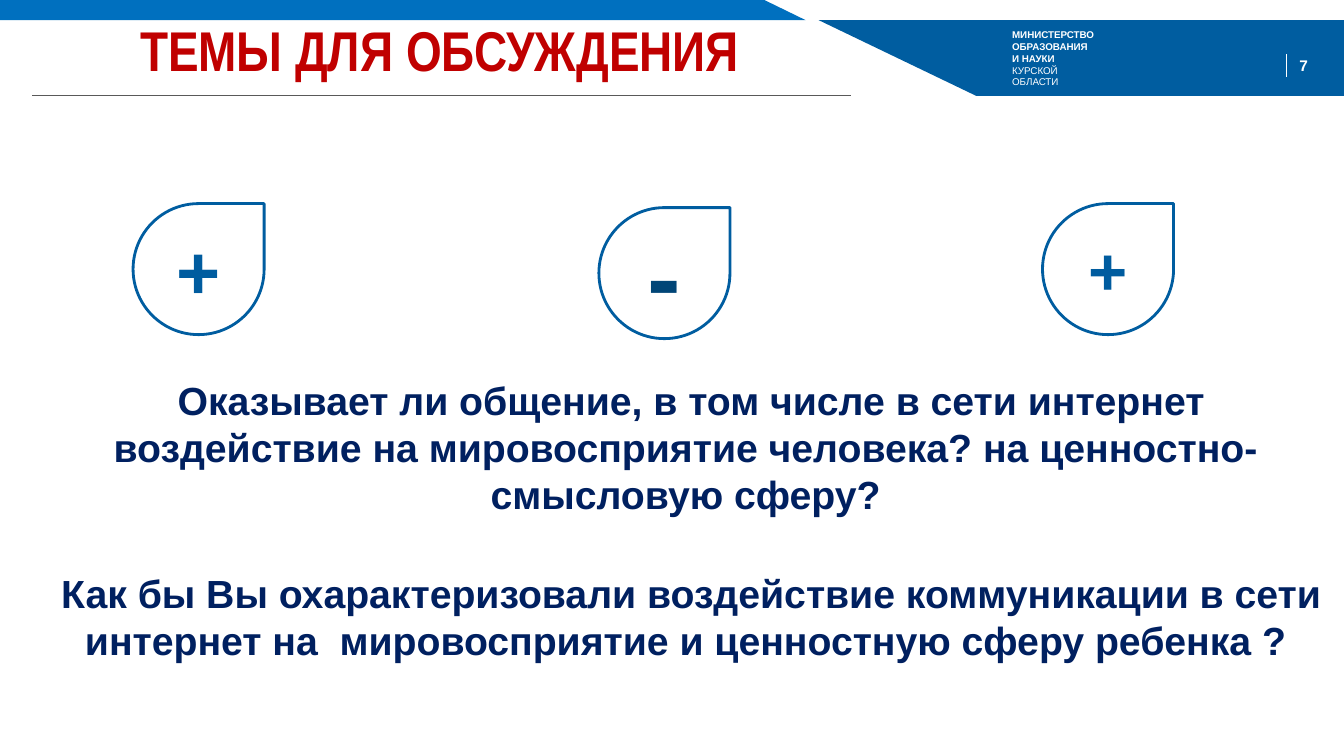
"""Build the discussion topics slide with its ministry header and three teardrop markers."""
from dataclasses import dataclass

from lxml import etree
from pptx import Presentation
from pptx.dml.color import RGBColor
from pptx.enum.shapes import MSO_CONNECTOR, MSO_SHAPE
from pptx.enum.text import MSO_ANCHOR, PP_ALIGN
from pptx.oxml.ns import qn
from pptx.util import Inches, Pt

STRAIGHT = MSO_CONNECTOR.STRAIGHT
TEARDROP = MSO_SHAPE.TEAR
TOP, MIDDLE = MSO_ANCHOR.TOP, MSO_ANCHOR.MIDDLE
LEFT, CENTER = PP_ALIGN.LEFT, PP_ALIGN.CENTER


@dataclass(frozen=True)
class Theme:
    font: str = "Arial"
    title_font: str = "Arial Narrow"
    strip: str = "0070BF"
    band: str = "005DA0"
    rule: str = "595959"
    white: str = "FFFFFF"
    title: str = "C00000"
    plus: str = "005C9F"
    minus: str = "004577"
    body: str = "002060"
    title_size: int = 40
    title_leading: int = 42
    body_size: int = 28
    gap_size: int = 37
    ministry_size: int = 7
    number_size: int = 11
    plus_size: int = 54
    minus_size: int = 72
    last_plus_size: int = 48


theme = Theme()


def write(shape, lines, size, color, font=theme.font, align=CENTER, anchor=TOP, margins=(0, 0)):
    frame = shape.text_frame
    frame.word_wrap = True
    frame.vertical_anchor = anchor
    frame.margin_left = frame.margin_right = Inches(margins[0])
    frame.margin_top = frame.margin_bottom = Inches(margins[1])
    frame.text = "\n".join(lines)
    for paragraph in frame.paragraphs:
        paragraph.alignment = align
        for run in paragraph.runs:
            run.font.name = font
            run.font.size = Pt(size)
            run.font.bold = True
            run.font.color.rgb = RGBColor.from_string(color)
    return frame.paragraphs


def text_box(left, top, width, height):
    return slide.shapes.add_textbox(Inches(left), Inches(top), Inches(width), Inches(height))


presentation = Presentation()
presentation.slide_width = Inches(13.33)
presentation.slide_height = Inches(7.5)
slide = presentation.slides.add_slide(presentation.slide_layouts[6])

header_outlines = [
    (theme.strip, [(0, 0), (7.58, 0), (7.99, 0.2), (0, 0.2)]),
    (theme.band, [(8.12, 0.2), (13.33, 0.2), (13.33, 0.95), (9.68, 0.95)]),
]
for color, points in header_outlines:
    corners = [(Inches(x), Inches(y)) for x, y in points]
    builder = slide.shapes.build_freeform(*corners[0], scale=1.0)
    builder.add_line_segments(corners[1:], close=True)
    shape = builder.convert_to_shape()
    shape.shadow.inherit = False
    shape.fill.solid()
    shape.fill.fore_color.rgb = RGBColor.from_string(color)
    shape.line.fill.background()

header_lines = [
    (theme.rule, (0.32, 0.95, 8.44, 0.95)),
    (theme.white, (12.76, 0.54, 12.76, 0.76)),
]
for color, ends in header_lines:
    connector = slide.shapes.add_connector(STRAIGHT, *map(Inches, ends))
    connector.line.color.rgb = RGBColor.from_string(color)
    connector.line.width = Pt(0.5)
    etree.SubElement(connector.element.spPr, qn("a:effectLst"))

write(text_box(12.78, 0.54, 0.3, 0.22), ["7"], theme.number_size, theme.white, anchor=MIDDLE)

ministry = ["МИНИСТЕРСТВО", "ОБРАЗОВАНИЯ", "И НАУКИ", "КУРСКОЙ", "ОБЛАСТИ"]
ministry_lines = write(text_box(9.94, 0.24, 1.02, 0.69), ministry, theme.ministry_size,
                       theme.white, align=LEFT, margins=(0.1, 0.05))
for paragraph in ministry_lines[3:]:
    paragraph.runs[0].font.bold = False

title = write(text_box(0.42, 0.24, 7.88, 0.96), ["ТЕМЫ ДЛЯ ОБСУЖДЕНИЯ"],
              theme.title_size, theme.title, font=theme.title_font)
title[0].line_spacing = Pt(theme.title_leading)

markers = [
    (1.32, 2.02, "+", theme.plus_size, theme.plus),
    (5.94, 2.06, "-", theme.minus_size, theme.minus),
    (10.34, 2.02, "+", theme.last_plus_size, theme.plus),
]
for left, top, sign, size, color in markers:
    marker = slide.shapes.add_shape(TEARDROP, Inches(left), Inches(top), Inches(1.3), Inches(1.3))
    marker.shadow.inherit = False
    marker.fill.background()
    marker.line.color.rgb = RGBColor.from_string(theme.band)
    marker.line.width = Pt(2)
    write(marker, [sign], size, color, anchor=MIDDLE, margins=(0.1, 0.05))

questions = [
    "Оказывает ли общение, в том числе в сети интернет воздействие на мировосприятие "
    "человека? на ценностно-смысловую сферу?",
    "Как бы Вы охарактеризовали воздействие коммуникации в сети интернет на  "
    "мировосприятие и ценностную сферу ребенка ?",
]
question_paragraphs = write(text_box(0.37, 3.73, 12.86, 3.3), questions, theme.body_size, theme.body)
for paragraph in question_paragraphs:
    paragraph._p.get_or_add_pPr().set("indent", str(Inches(0.11)))
question_paragraphs[1].space_before = Pt(theme.gap_size)

presentation.save("out.pptx")
